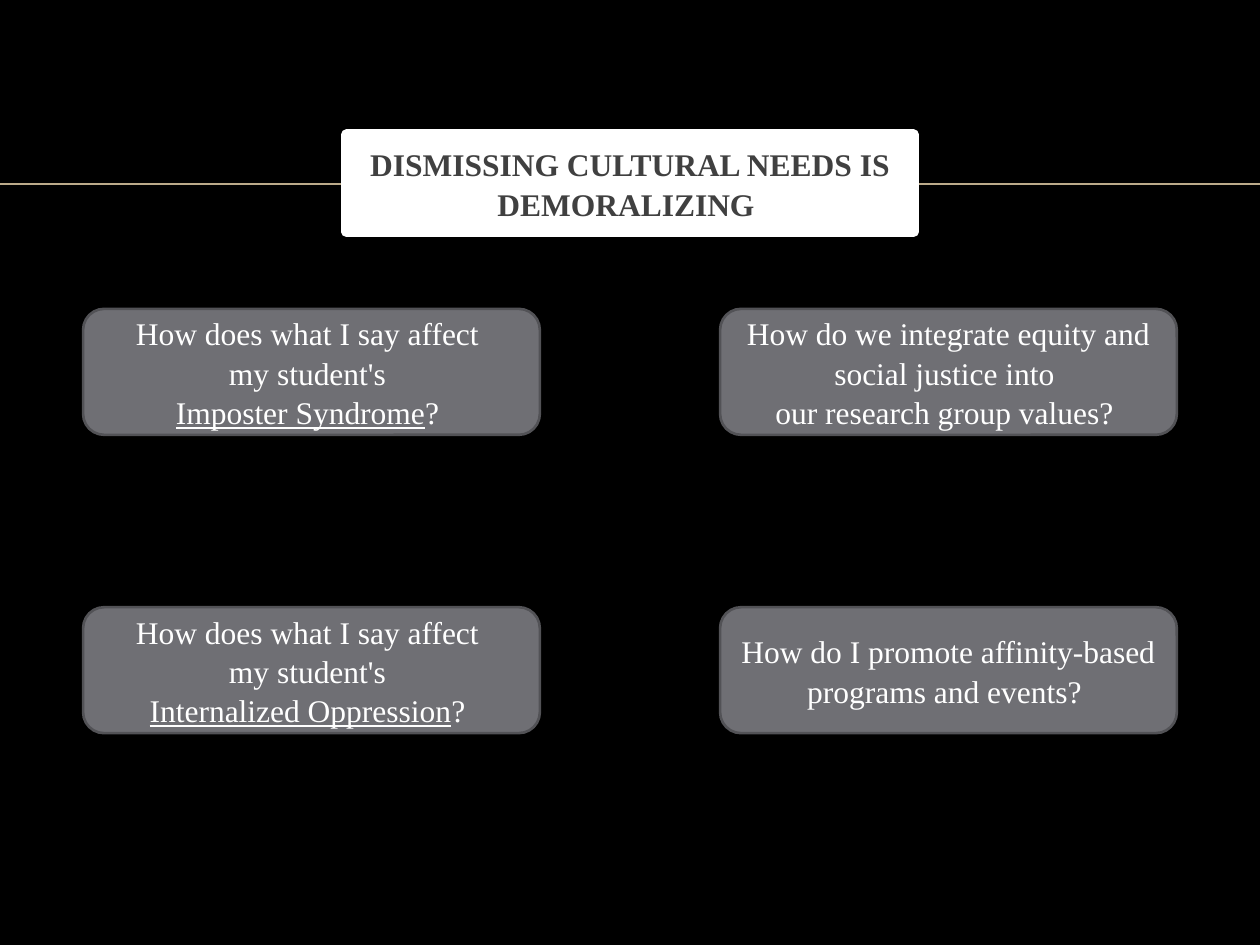
from dataclasses import dataclass

from lxml import etree
from pptx import Presentation
from pptx.dml.color import RGBColor
from pptx.enum import shapes, text
from pptx.oxml import ns
from pptx.util import Pt


@dataclass(frozen=True)
class Theme:
    font: str = "Times New Roman"
    size: float = 18
    background: str = "000000"
    rule: str = "BBAA8A"
    title_fill: str = "FFFFFF"
    title_text: str = "404040"
    card_fill: str = "6F6F74"
    card_line: str = "525256"
    card_text: str = "FFFFFF"


THEME = Theme()
TITLE = "DISMISSING CULTURAL NEEDS IS DEMORALIZING "
TITLE_BOX = (198, 77, 324, 55.5)
RULE_Y = 105
CARD_SIZE = (261, 72)
COLUMNS = (47.5, 411.5)
ROWS = (176.5, 347)

# One list of cards per row; a card is a list of paragraphs, and a
# paragraph is a list of (wording, underlined) spans.
CARDS = [
    [
        [
            [("How does what I say affect ", False)],
            [("my student's ", False)],
            [("Imposter Syndrome", True), ("? ", False)],
        ],
        [
            [("How do we integrate equity and social justice into ", False)],
            [("our research group values? ", False)],
        ],
    ],
    [
        [
            [("How does what I say affect ", False)],
            [("my student's ", False)],
            [("Internalized Oppression", True), ("? ", False)],
        ],
        [[("How do I promote affinity-based programs and events? ", False)]],
    ],
]


def color(code):
    return RGBColor.from_string(code)


def add_span(para, wording, *, ink, bold=False, underline=False):
    span = para.add_run()
    span.text = wording
    font = span.font
    font.name, font.size = THEME.font, Pt(THEME.size)
    font.bold, font.underline = bold, underline
    font.color.rgb = color(ink)


def paint(shape, fill, line, width):
    shape.fill.solid()
    shape.fill.fore_color.rgb = color(fill)
    shape.line.color.rgb = color(line)
    shape.line.width = Pt(width)


def center_text(frame):
    frame.word_wrap = True
    frame.auto_size = text.MSO_AUTO_SIZE.NONE
    frame.vertical_anchor = text.MSO_ANCHOR.MIDDLE


def add_rule(page, y, width):
    rule = page.shapes.add_connector(
        shapes.MSO_CONNECTOR.STRAIGHT, 0, Pt(y), width, Pt(y))
    rule.line.color.rgb = color(THEME.rule)
    rule.line.width = Pt(1)
    etree.SubElement(rule._element.spPr, ns.qn("a:effectLst"))


def format_title(page):
    title = page.shapes.title
    title.left, title.top, title.width, title.height = map(Pt, TITLE_BOX)
    paint(title, THEME.title_fill, THEME.title_fill, 6)
    center_text(title.text_frame)
    para = title.text_frame.paragraphs[0]
    para.alignment = text.PP_ALIGN.CENTER
    para.space_before = Pt(4)
    para.line_spacing = 1.04
    add_span(para, TITLE, ink=THEME.title_text, bold=True)
    # The title covers the middle of the rule.
    page.shapes._spTree.append(title._element)


def add_card(page, left, top, paragraphs):
    card = page.shapes.add_shape(
        shapes.MSO_SHAPE.ROUNDED_RECTANGLE,
        Pt(left), Pt(top), *map(Pt, CARD_SIZE))
    card.shadow.inherit = False
    paint(card, THEME.card_fill, THEME.card_line, 1.5)
    frame = card.text_frame
    center_text(frame)
    for index, spans in enumerate(paragraphs):
        para = frame.add_paragraph() if index else frame.paragraphs[0]
        para.alignment = text.PP_ALIGN.CENTER
        para.line_spacing = 1.04
        for wording, underline in spans:
            add_span(para, wording, ink=THEME.card_text, underline=underline)


def main():
    deck = Presentation()
    deck.slide_width, deck.slide_height = Pt(720), Pt(540)
    page = deck.slides.add_slide(deck.slide_layouts.get_by_name("Title Only"))
    page.background.fill.solid()
    page.background.fill.fore_color.rgb = color(THEME.background)
    add_rule(page, RULE_Y, deck.slide_width)
    format_title(page)
    for top, row in zip(ROWS, CARDS):
        for left, paragraphs in zip(COLUMNS, row):
            add_card(page, left, top, paragraphs)
    deck.save("out.pptx")


if __name__ == "__main__":
    main()
